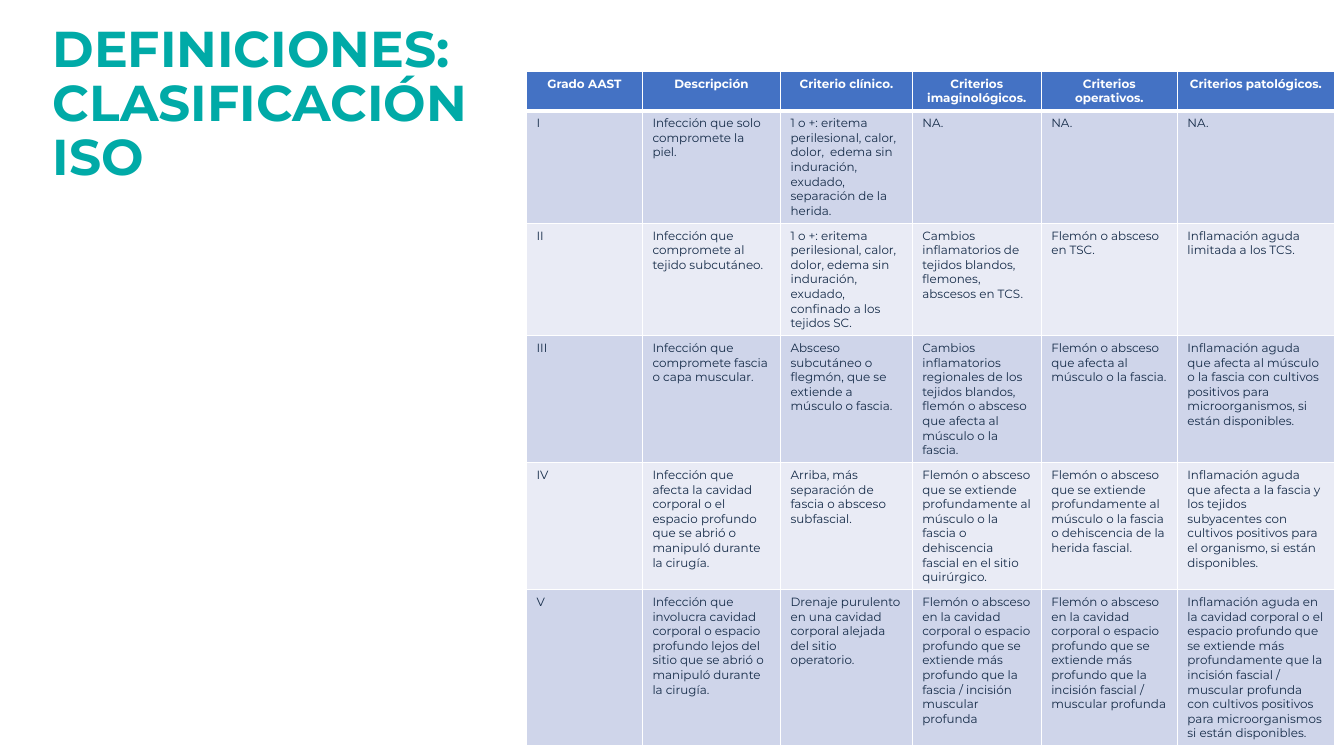
from dataclasses import dataclass

from lxml import etree
from pptx import Presentation
from pptx.dml.color import RGBColor
from pptx.enum.text import MSO_ANCHOR, MSO_AUTO_SIZE, PP_ALIGN
from pptx.oxml.ns import qn
from pptx.util import Cm, Pt

LEFT, CENTER = PP_ALIGN.LEFT, PP_ALIGN.CENTER
MIDDLE = MSO_ANCHOR.MIDDLE
NO_AUTOFIT = MSO_AUTO_SIZE.NONE
TITLE_ONLY = 5


@dataclass(frozen=True)
class Theme:
    font: str = "Montserrat"
    title_size: float = 36
    table_size: float = 8.5
    title: str = "00AAA7"
    header: str = "4472C4"
    bands: tuple[str, str] = ("CFD5EA", "E9EBF5")
    text: str = "152B48"
    white: str = "FFFFFF"
    border: float = 1
    header_border: float = 3


@dataclass(frozen=True)
class Column:
    heading: str
    width: float


@dataclass(frozen=True)
class Grade:
    height: float
    texts: tuple[str, ...]


@dataclass(frozen=True)
class CellStyle:
    fill: str
    color: str
    bold: bool
    align: PP_ALIGN
    bottom: float


THEME = Theme()
HEADER_HEIGHT = 1.0
HEADER_STYLE = CellStyle(THEME.header, THEME.white, True, CENTER, THEME.header_border)
BODY_STYLES = [CellStyle(band, THEME.text, False, LEFT, THEME.border)
               for band in THEME.bands]

COLUMNS = [
    Column("Grado AAST", 2.92),
    Column("Descripción", 3.48),
    Column("Criterio clínico.", 3.32),
    Column("Criterios imaginológicos.", 3.25),
    Column("Criterios operativos.", 3.43),
    Column("Criterios patológicos.", 3.96),
]

GRADES = [
    Grade(2.83, (
        "I",
        "Infección que solo compromete la piel.",
        "1 o +: eritema perilesional, calor, dolor,  edema sin induración, "
        "exudado, separación de la herida.",
        "NA.",
        "NA.",
        "NA.",
    )),
    Grade(2.83, (
        "II",
        "Infección que compromete al tejido subcutáneo.",
        "1 o +: eritema perilesional, calor, dolor, edema sin induración, "
        "exudado, confinado a los tejidos SC.",
        "Cambios inflamatorios de tejidos blandos, flemones, abscesos en TCS.",
        "Flemón o absceso en TSC.",
        "Inflamación aguda limitada a los TCS.",
    )),
    Grade(3.2, (
        "III",
        "Infección que compromete fascia o capa muscular.",
        "Absceso subcutáneo o flegmón, que se extiende a músculo o fascia.",
        "Cambios inflamatorios regionales de los tejidos blandos, flemón o "
        "absceso que afecta al músculo o la fascia.",
        "Flemón o absceso que afecta al músculo o la fascia.",
        "Inflamación aguda que afecta al músculo o la fascia con cultivos "
        "positivos para microorganismos, si están disponibles.",
    )),
    Grade(3.2, (
        "IV",
        "Infección que afecta la cavidad corporal o el espacio profundo que se "
        "abrió o manipuló durante la cirugía.",
        "Arriba, más separación de fascia o absceso subfascial.",
        "Flemón o absceso que se extiende profundamente al músculo o la fascia "
        "o dehiscencia fascial en el sitio quirúrgico.",
        "Flemón o absceso que se extiende profundamente al músculo o la fascia "
        "o dehiscencia de la herida fascial.",
        "Inflamación aguda que afecta a la fascia y los tejidos subyacentes con "
        "cultivos positivos para el organismo, si están disponibles.",
    )),
    Grade(3.92, (
        "V",
        "Infección que involucra cavidad corporal o espacio profundo lejos del "
        "sitio que se abrió o manipuló durante la cirugía.",
        "Drenaje purulento en una cavidad corporal alejada del sitio operatorio.",
        "Flemón o absceso en la cavidad corporal o espacio profundo que se "
        "extiende más profundo que la fascia / incisión muscular profunda",
        "Flemón o absceso en la cavidad corporal o espacio profundo que se "
        "extiende más profundo que la incisión fascial / muscular profunda",
        "Inflamación aguda en la cavidad corporal o el espacio profundo que se "
        "extiende más profundamente que la incisión fascial / muscular profunda "
        "con cultivos positivos para microorganismos si están disponibles.",
    )),
]


def set_font(p, size: float, color: str, bold: bool) -> None:
    p.font.name = THEME.font
    p.font.size = Pt(size)
    p.font.bold = bold
    p.font.color.rgb = RGBColor.from_string(color)


def set_borders(cell, bottom: float) -> None:
    tc_pr = cell._tc.get_or_add_tcPr()
    widths = {"a:lnL": THEME.border, "a:lnR": THEME.border,
              "a:lnT": THEME.border, "a:lnB": bottom}
    for i, (tag, width) in enumerate(widths.items()):
        ln = etree.Element(qn(tag), w=str(Pt(width)))
        fill = etree.SubElement(ln, qn("a:solidFill"))
        etree.SubElement(fill, qn("a:srgbClr"), val=THEME.white)
        tc_pr.insert(i, ln)


def fill_cell(cell, text: str, style: CellStyle) -> None:
    cell.fill.solid()
    cell.fill.fore_color.rgb = RGBColor.from_string(style.fill)
    set_borders(cell, style.bottom)
    p = cell.text_frame.paragraphs[0]
    p.add_run().text = text
    p.alignment = style.align
    set_font(p, THEME.table_size, style.color, style.bold)


def add_title(s) -> None:
    sp = s.shapes.title
    sp.left, sp.top, sp.width, sp.height = Cm(1.07), Cm(0.81), Cm(12.98), Cm(3.68)
    tf = sp.text_frame
    tf.word_wrap = True
    tf.auto_size = NO_AUTOFIT
    tf.vertical_anchor = MIDDLE
    p = tf.paragraphs[0]
    p.add_run().text = "DEFINICIONES: CLASIFICACIÓN"
    p.add_line_break()
    p.add_run().text = "ISO"
    p.alignment = LEFT
    p.line_spacing = 0.9
    set_font(p, THEME.title_size, THEME.title, True)


def add_grade_table(s) -> None:
    heights = [HEADER_HEIGHT] + [grade.height for grade in GRADES]
    width = sum(column.width for column in COLUMNS)
    frame = s.shapes.add_table(len(heights), len(COLUMNS), Cm(13.27), Cm(1.8),
                               Cm(width), Cm(sum(heights)))
    table = frame.table
    table.horz_banding = False
    for row, height in zip(table.rows, heights):
        row.height = Cm(height)
    for c, column in enumerate(COLUMNS):
        table.columns[c].width = Cm(column.width)
        fill_cell(table.cell(0, c), column.heading, HEADER_STYLE)
        for r, grade in enumerate(GRADES):
            fill_cell(table.cell(r + 1, c), grade.texts[c], BODY_STYLES[r % 2])


def main() -> None:
    prs = Presentation()
    prs.slide_width, prs.slide_height = Cm(33.87), Cm(19.05)
    s = prs.slides.add_slide(prs.slide_layouts[TITLE_ONLY])
    add_title(s)
    add_grade_table(s)
    prs.save("out.pptx")


if __name__ == "__main__":
    main()
